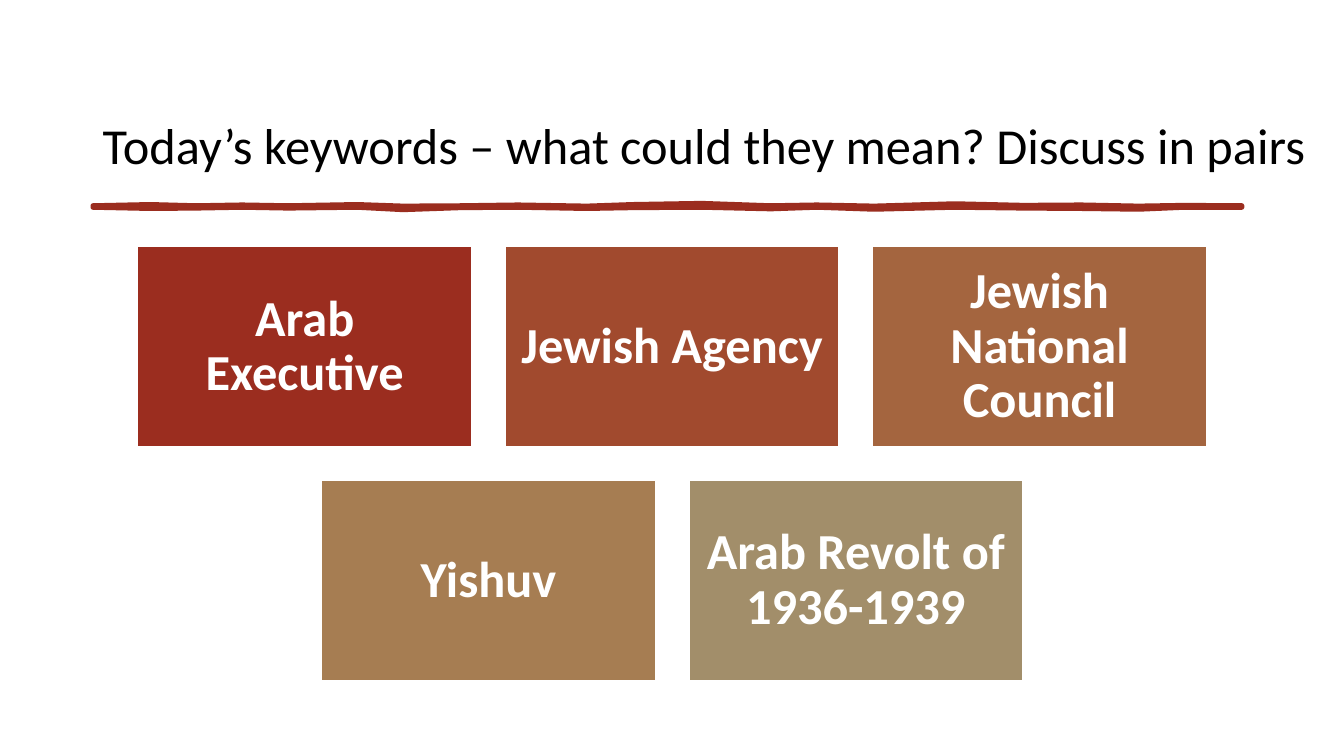
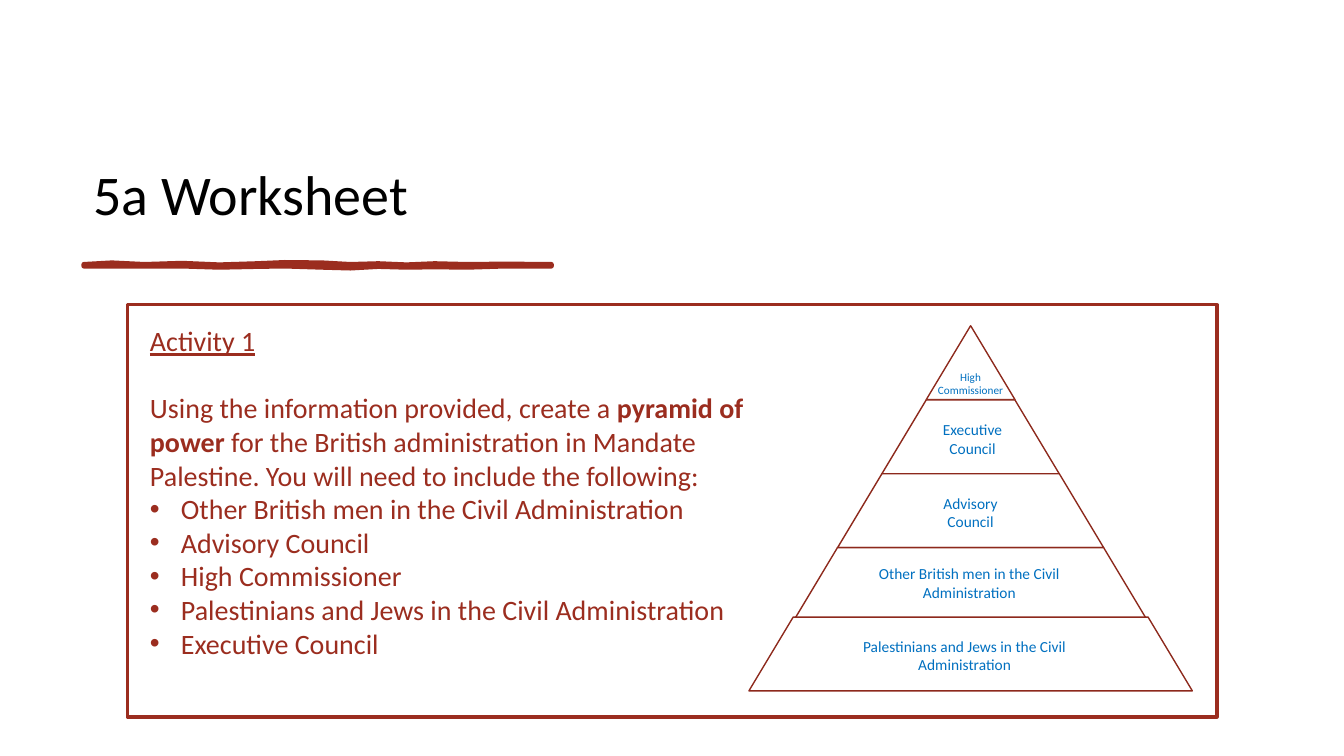
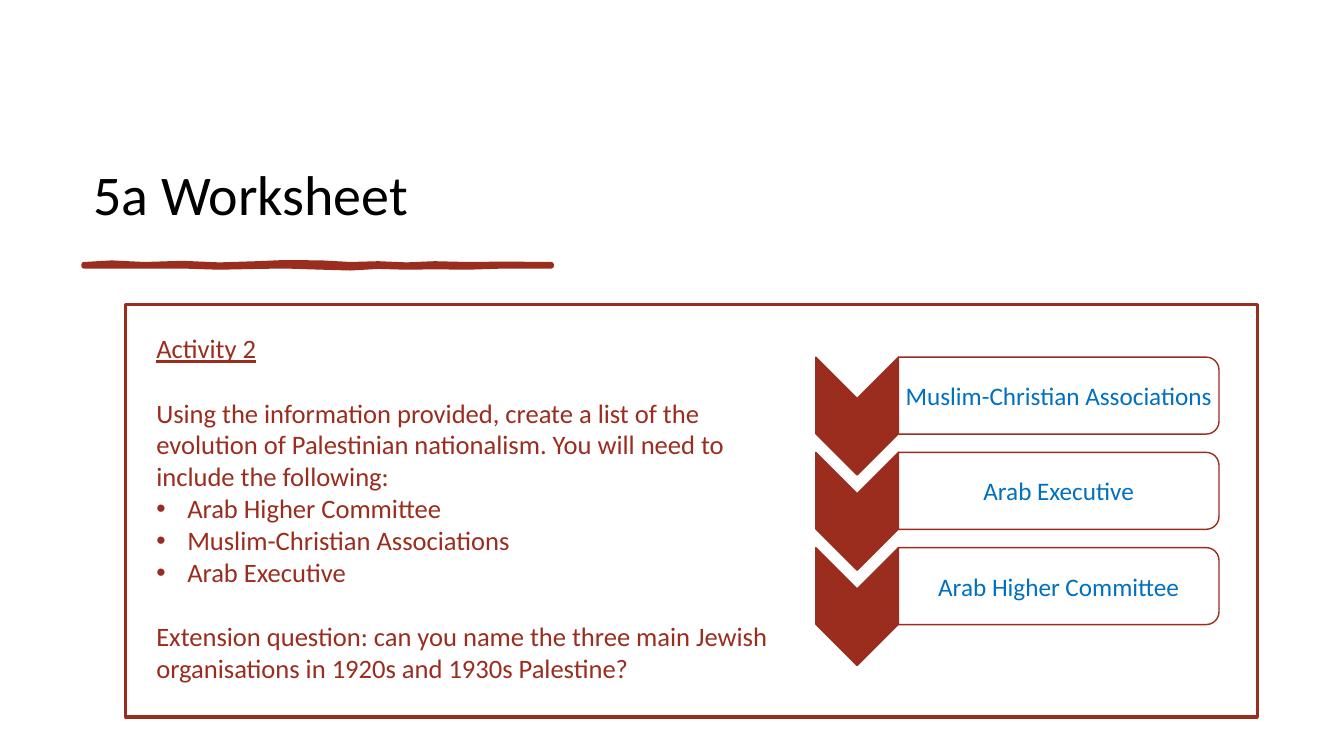
from lxml.etree import SubElement
from pptx import Presentation
from pptx.dml.color import RGBColor
from pptx.enum.shapes import MSO_SHAPE
from pptx.enum.text import MSO_ANCHOR, PP_ALIGN
from pptx.oxml.ns import qn
from pptx.util import Cm, Pt

FONT = "Calibri"
RED, DARK_RED, BLUE = "9B2D1F", "8D291C", "0070C0"
BLACK, WHITE = "000000", "FFFFFF"

WIDE_STROKE = [
    (0, 0, 0.05), (0.05, -0.03, 0.08), (0.09, 0, 0.07), (0.13, -0.02, 0.05),
    (0.17, 0, 0.07), (0.23, -0.03, 0.05), (0.27, 0.01, 0.11), (0.32, 0, 0.06),
    (0.37, -0.02, 0.05), (0.43, 0.01, 0.08), (0.47, -0.03, 0.06),
    (0.53, -0.06, 0.05), (0.59, 0, 0.09), (0.63, -0.02, 0.05),
    (0.68, 0.01, 0.1), (0.75, -0.05, 0.05), (0.81, -0.01, 0.07),
    (0.86, -0.02, 0.08), (0.91, 0.01, 0.1), (0.95, -0.01, 0.05), (1, 0, 0.05),
]
SHORT_STROKE = [
    (0, 0, 0.05), (0.06, -0.04, 0.05), (0.13, 0, 0.05), (0.21, -0.03, 0.05),
    (0.29, 0.01, 0.08), (0.37, -0.02, 0.06), (0.43, -0.05, 0.05),
    (0.51, -0.04, 0.08), (0.57, 0, 0.1), (0.63, -0.02, 0.06),
    (0.69, 0.01, 0.08), (0.75, -0.02, 0.07), (0.82, 0, 0.08),
    (0.9, -0.01, 0.05), (1, 0, 0.05),
]


def colour(value):
    return RGBColor.from_string(value)


def place(box):
    return [Cm(length) for length in box]


def paint(shape, fill=None, line=None, width=1):
    shape.shadow.inherit = False
    if fill:
        shape.fill.solid()
        shape.fill.fore_color.rgb = colour(fill)
    else:
        shape.fill.background()
    shape.line.color.rgb = colour(line)
    shape.line.width = Pt(width)


def add_figure(page, kind, box, **look):
    shape = page.shapes.add_shape(kind, *place(box))
    paint(shape, **look)
    return shape


def add_turned_figure(page, kind, box, **look):
    left, top, width, height = box
    shift = (width - height) / 2
    shape = add_figure(page, kind, (left + shift, top - shift, height, width), **look)
    shape.rotation = 90


def style(para, size, ink, bold=None, align=PP_ALIGN.LEFT):
    para.alignment = align
    for span in para.runs:
        span.font.name = FONT
        span.font.size = Pt(size)
        span.font.color.rgb = colour(ink)
        if bold is not None:
            span.font.bold = bold


def add_text_frame(page, box):
    frame = page.shapes.add_textbox(*place(box)).text_frame
    frame.word_wrap = True
    return frame


def add_label(page, text, box, size):
    frame = add_text_frame(page, box)
    frame.text = text
    style(frame.paragraphs[0], size, BLUE, align=PP_ALIGN.CENTER)


def add_title(page, text, box, size):
    frame = add_text_frame(page, box)
    frame.vertical_anchor = MSO_ANCHOR.BOTTOM
    frame.text = text
    para = frame.paragraphs[0]
    para.line_spacing = 0.9
    style(para, size, BLACK)


def add_brush_line(page, left, top, width, stroke):
    upper = [(left + width * x, top + y) for x, y, _ in stroke]
    lower = [(left + width * x, top + y) for x, _, y in reversed(stroke)]
    start, *outline = [place(point) for point in upper + lower]
    builder = page.shapes.build_freeform(*start, scale=1.0)
    builder.add_line_segments(outline, close=True)
    paint(builder.convert_to_shape(), fill=RED, line=RED, width=3.25)


def add_card(page, text, box, fill):
    card = add_figure(page, MSO_SHAPE.RECTANGLE, box, fill=fill, line=WHITE)
    frame = card.text_frame
    frame.word_wrap = True
    frame.vertical_anchor = MSO_ANCHOR.MIDDLE
    frame.margin_left = frame.margin_right = Cm(0.38)
    frame.margin_top = frame.margin_bottom = Cm(0.38)
    frame.text = text
    para = frame.paragraphs[0]
    para.line_spacing = 0.9
    style(para, 36, WHITE, bold=True, align=PP_ALIGN.CENTER)


def add_card_rows(page, rows, centre, top):
    width, height, gap = 8.42, 5.05, 0.84
    for row_number, row in enumerate(rows):
        row_width = len(row) * (width + gap) - gap
        for column, (text, fill) in enumerate(row):
            left = centre - row_width / 2 + column * (width + gap)
            row_top = top + row_number * (height + gap)
            add_card(page, text, (left, row_top, width, height), fill)


def add_bullet(para):
    properties = para._p.get_or_add_pPr()
    properties.set("marL", str(Cm(0.78)))
    properties.set("indent", str(-Cm(0.78)))
    SubElement(properties, qn("a:buFont")).set("typeface", "Arial")
    SubElement(properties, qn("a:buChar")).set("char", "•")


def add_activity(page, box, size, gap, heading, task, items, closing=None):
    frame = add_text_frame(page, box)
    frame.text = heading
    frame.paragraphs[0].runs[0].font.underline = True
    para = frame.add_paragraph()
    para.space_before = Pt(gap)
    for text, bold in task:
        span = para.add_run()
        span.text = text
        span.font.bold = bold
    for item in items:
        para = frame.add_paragraph()
        para.text = item
        add_bullet(para)
    if closing:
        para = frame.add_paragraph()
        para.text = closing
        para.space_before = Pt(gap)
    for para in frame.paragraphs:
        style(para, size, RED)


def add_pyramid(page, centre, top, tiers):
    tier_width, height = 2.235, 1.86
    for number, (tier_top, *_) in enumerate(tiers, 1):
        width = number * tier_width
        box = (centre - width / 2, top + tier_top, width, height)
        tier = add_figure(page, MSO_SHAPE.TRAPEZOID, box, fill=WHITE, line=DARK_RED)
        tier.adjustments[0] = 0.6
    for tier_top, text, width, drop, shift, size in tiers:
        left = centre + shift - width / 2
        add_label(page, text, (left, top + tier_top + drop, width, 1.1), size)


def add_chevron_list(page, left, top, steps):
    pitch, arrow_width, bar_width, bar_height = 2.4, 2.08, 8.08, 1.94
    bar_left = left + arrow_width
    label_width = 8.68
    for number, text in enumerate(steps):
        step_top = top + number * pitch
        add_turned_figure(page, MSO_SHAPE.CHEVRON,
                          (left, step_top, arrow_width, 2.97), fill=RED, line=RED)
        add_turned_figure(page, MSO_SHAPE.ROUND_2_SAME_RECTANGLE,
                          (bar_left, step_top, bar_width, bar_height),
                          fill=WHITE, line=RED)
        label_left = bar_left + (bar_width - label_width) / 2
        add_label(page, text, (label_left, step_top + 0.46, label_width, 1.02), 18)


def add_page(deck):
    return deck.slides.add_slide(deck.slide_layouts[6])


def build_keywords(deck):
    page = add_page(deck)
    add_brush_line(page, 2.34, 5.18, 28.96, WIDE_STROKE)
    rows = [
        [("Arab Executive", RED), ("Jewish Agency", "A14A2E"),
         ("Jewish National Council", "A4653F")],
        [("Yishuv", "A67D52"), ("Arab Revolt of 1936-1939", "A28E6A")],
    ]
    add_card_rows(page, rows, 16.94, 6.22)
    add_title(page, "Today’s keywords – what could they mean? Discuss in pairs",
              (2.34, 0.66, 31.4, 3.89), 36)


def build_worksheet(deck, panel):
    page = add_page(deck)
    add_title(page, "5a Worksheet", (2.11, 1.96, 20.75, 3.89), 40)
    add_brush_line(page, 2.11, 6.66, 11.79, SHORT_STROKE)
    add_figure(page, MSO_SHAPE.RECTANGLE, panel, line=RED, width=2.25)
    return page


def build_power_activity(deck):
    page = build_worksheet(deck, (3.21, 7.68, 27.46, 10.39))
    tiers = [
        (0, "High Commissioner", 2.44, 0.99, 0, 8),
        (1.87, "Executive Council", 2.44, 0.39, 0.05, 11),
        (3.73, "Advisory Council", 2.44, 0.38, 0, 11),
        (5.59, "Other British men in the Civil Administration", 5.66, 0.3, -0.03, 11),
        (7.34, "Palestinians and Jews in the Civil Administration", 7.52, 0.38, -0.15, 11),
    ]
    add_pyramid(page, 24.46, 8.21, tiers)
    task = [
        ("Using the information provided, create a ", False),
        ("pyramid of power ", True),
        ("for the British administration in Mandate Palestine. "
         "You will need to include the following:", False),
    ]
    items = [
        "Other British men in the Civil Administration",
        "Advisory Council",
        "High Commissioner",
        "Palestinians and Jews in the Civil Administration",
        "Executive Council",
    ]
    add_activity(page, (3.53, 8.03, 15.8, 7.95), 20, 24, "Activity 1", task, items)


def build_nationalism_activity(deck):
    page = build_worksheet(deck, (3.17, 7.68, 28.52, 10.39))
    task = [("Using the information provided, create a list of the evolution of "
             "Palestinian nationalism. You will need to include the following:", False)]
    items = ["Arab Higher Committee", "Muslim-Christian Associations", "Arab Executive"]
    closing = ("Extension question: can you name the three main Jewish "
               "organisations in 1920s and 1930s Palestine?")
    add_activity(page, (3.69, 8.25, 16.56, 7.95), 19, 23, "Activity 2", task, items, closing)
    steps = ["Muslim-Christian Associations", "Arab Executive", "Arab Higher Committee"]
    add_chevron_list(page, 20.56, 9, steps)


def main():
    deck = Presentation()
    deck.slide_width, deck.slide_height = Cm(33.87), Cm(19.05)
    build_keywords(deck)
    build_power_activity(deck)
    build_nationalism_activity(deck)
    deck.save("out.pptx")


if __name__ == "__main__":
    main()
